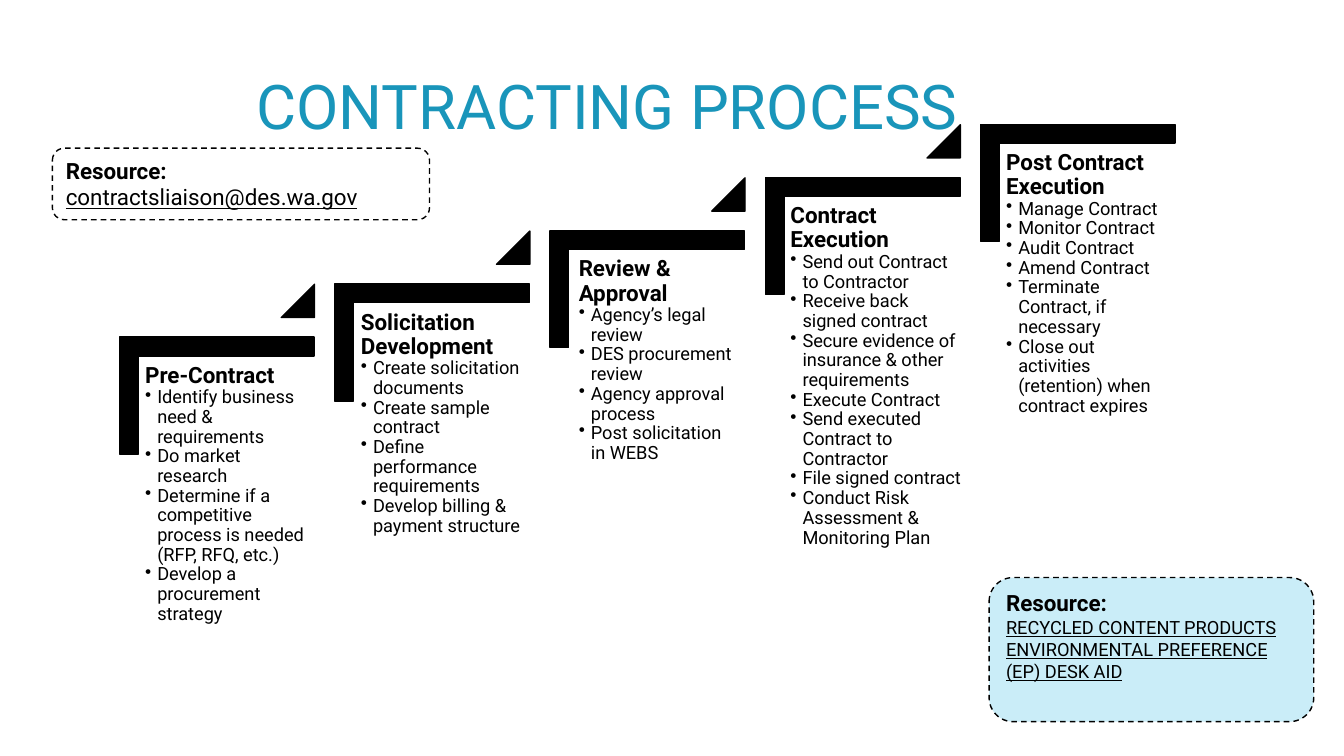
from lxml import etree
from pptx import Presentation
from pptx.dml.color import RGBColor
from pptx.enum.dml import MSO_LINE
from pptx.enum.shapes import MSO_SHAPE as SHAPE
from pptx.enum.text import MSO_ANCHOR as ANCHOR, PP_ALIGN as ALIGN
from pptx.oxml.ns import qn
from pptx.util import Inches, Pt

BLACK = RGBColor(0x00, 0x00, 0x00)
WHITE = RGBColor(0xFF, 0xFF, 0xFF)
TEAL = RGBColor(0x19, 0x95, 0xBA)
PALE_BLUE = RGBColor(0xCA, 0xED, 0xF8)

FONT = "Roboto"
HEAD_SIZE, BODY_SIZE = 16, 13

# Staircase grid: each step moves one column right and one row up
COLUMN, ROW = 2.135, -0.5275
FIRST_X, FIRST_Y = 1.57, 2.96
CORNER_W, CORNER_H = 1.16, 1.93
TRIANGLE = 0.33
TEXT_H = 1.53

# Heading, text left, text width, bullets
STEPS = [
    ("Pre-Contract", 1.37, 1.74, [
        "Identify business need & requirements",
        "Do market research",
        "Determine if a competitive process is needed (RFP, RFQ, etc.)",
        "Develop a procurement strategy"]),
    ("Solicitation Development", 3.51, 1.74, [
        "Create solicitation documents",
        "Create sample contract",
        "Define performance requirements",
        "Develop billing & payment structure"]),
    ("Review & Approval", 5.67, 1.69, [
        "Agency’s legal review",
        "DES procurement review",
        "Agency approval process",
        "Post solicitation in WEBS"]),
    ("Contract Execution", 7.77, 1.83, [
        "Send out Contract to Contractor",
        "Receive back signed contract",
        "Secure evidence of insurance & other requirements",
        "Execute Contract",
        "Send executed Contract to Contractor",
        "File signed contract",
        "Conduct Risk Assessment & Monitoring Plan"]),
    ("Post Contract Execution", 9.91, 1.74, [
        "Manage Contract",
        "Monitor Contract",
        "Audit Contract",
        "Amend Contract",
        "Terminate Contract, if necessary",
        "Close out activities (retention) when contract expires"]),
]

# Position and size, fill, link text, link size, link on its own line
RESOURCES = [
    ((0.52, 1.47, 3.74, 0.71), WHITE,
     "contractsliaison@des.wa.gov", HEAD_SIZE, False),
    ((9.81, 5.73, 3.22, 1.43), PALE_BLUE,
     "RECYCLED CONTENT PRODUCTS ENVIRONMENTAL PREFERENCE (EP) DESK AID",
     BODY_SIZE, True),
]


def add_outlined(shapes, kind, box, fill):
    sp = shapes.add_shape(kind, *map(Inches, box))
    sp.shadow.inherit = False
    sp.fill.solid()
    sp.fill.fore_color.rgb = fill
    sp.line.color.rgb = BLACK
    sp.line.width = Pt(1)
    return sp


def set_font(font, size, color=BLACK, bold=False):
    font.name = FONT
    font.size = Pt(size)
    font.color.rgb = color
    font.bold = bold


prs = Presentation()
prs.slide_width, prs.slide_height = Inches(13.33), Inches(7.5)
s = prs.slides.add_slide(prs.slide_layouts[5])

title = s.shapes.title
title.left, title.top, title.width, title.height = map(
    Inches, (2.44, 0.16, 8.5, 1.76))
title.text_frame.text = "CONTRACTING PROCESS"
title.text_frame.vertical_anchor = ANCHOR.MIDDLE
p = title.text_frame.paragraphs[0]
p.alignment = ALIGN.LEFT
set_font(p.font, 44, TEAL)

stairs = s.shapes.add_group_shape().shapes
for i, (heading, text_x, text_w, bullets) in enumerate(STEPS):
    x, y = FIRST_X + i * COLUMN, FIRST_Y + i * ROW

    corner = add_outlined(stairs, SHAPE.CORNER, (x, y, CORNER_W, CORNER_H), BLACK)
    corner.rotation = 90
    corner.adjustments[0] = corner.adjustments[1] = 0.16

    sp = stairs.add_textbox(*map(Inches, (text_x, y + 0.58, text_w, TEXT_H)))
    tf = sp.text_frame
    tf.word_wrap = True
    tf.margin_left = tf.margin_right = Inches(0.07)
    tf.margin_top = tf.margin_bottom = Inches(0.07)
    p = tf.paragraphs[0]
    p.text = heading
    p.line_spacing = 0.9
    set_font(p.font, HEAD_SIZE, bold=True)
    for bullet in bullets:
        p = tf.add_paragraph()
        p.text = bullet
        p.level = 1
        p.line_spacing = 0.9
        set_font(p.font, BODY_SIZE)
        pPr = p._p.get_or_add_pPr()
        pPr.set("marL", str(Inches(0.12)))
        pPr.set("indent", str(-Inches(0.12)))
        bu = etree.Element(qn("a:buChar"), char="•")
        pPr.find(qn("a:lnSpc")).addnext(bu)

    if i < len(STEPS) - 1:
        triangle = add_outlined(stairs, SHAPE.ISOSCELES_TRIANGLE,
                                (x + 1.22, y - 0.14, TRIANGLE, TRIANGLE), BLACK)
        triangle.adjustments[0] = 1

for box, fill, link, link_size, own_line in RESOURCES:
    sp = add_outlined(s.shapes, SHAPE.ROUNDED_RECTANGLE, box, fill)
    sp.line.dash_style = MSO_LINE.DASH
    tf = sp.text_frame
    tf.word_wrap = True
    tf.vertical_anchor = ANCHOR.TOP
    p = tf.paragraphs[0]
    r = p.add_run()
    r.text = "Resource:" if own_line else "Resource: "
    set_font(r.font, HEAD_SIZE, bold=True)
    if own_line:
        p = tf.add_paragraph()
    r = p.add_run()
    r.text = link
    set_font(r.font, link_size)
    r.font.underline = True
    for p in tf.paragraphs:
        p.alignment = ALIGN.LEFT

prs.save("out.pptx")
